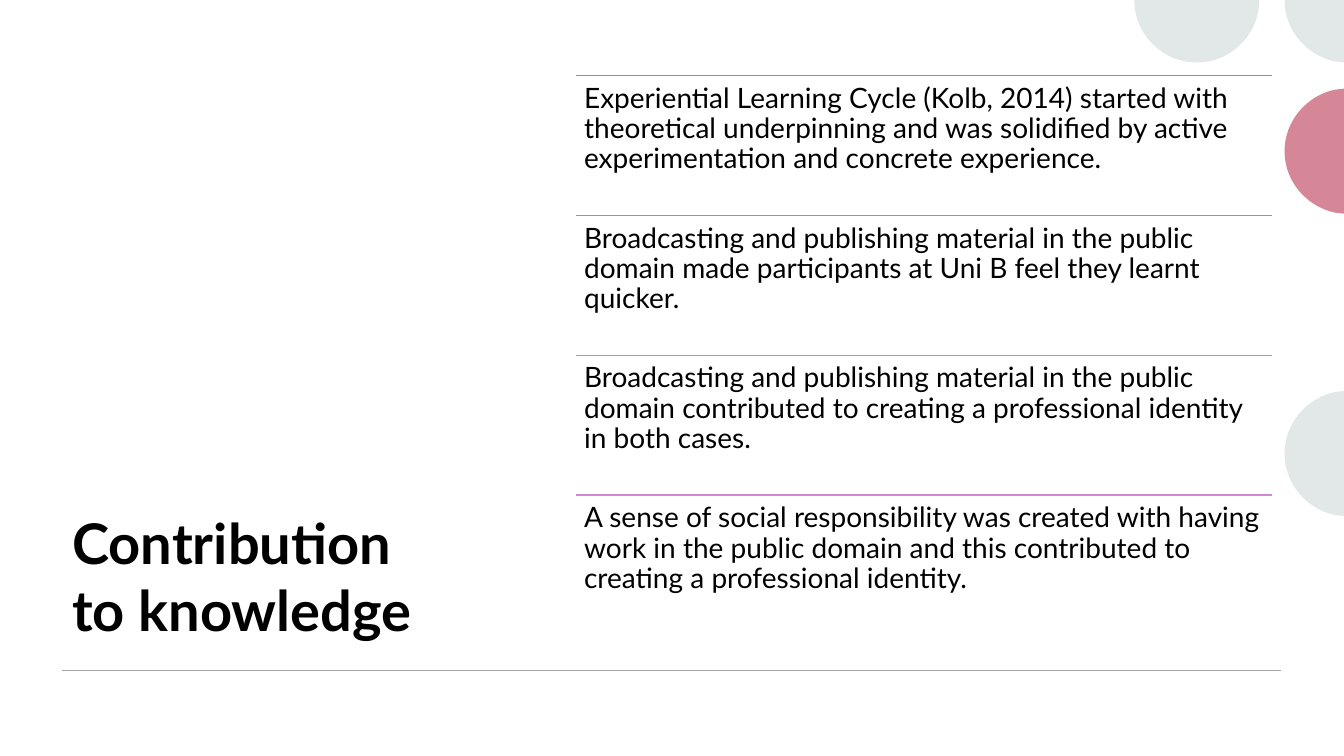
from lxml import etree
from pptx import Presentation
from pptx.dml.color import RGBColor
from pptx.enum.shapes import MSO_CONNECTOR as Connector
from pptx.enum.text import MSO_ANCHOR as Anchor
from pptx.oxml.ns import qn
from pptx.util import Inches, Pt

WIDTH, HEIGHT = 13.33, 7.5
COLORS = {
    "text": "000000",
    "mist": "E2E8E7",
    "rose": "D58797",
    "baseline": "A6A6A6",
    "rule 1": "CC6DA8",
    "rule 2": "CF76BA",
    "rule 3": "D27ECA",
    "rule 4": "D287D5",
}
FINDINGS = [
    "Experiential Learning Cycle (Kolb, 2014) started with theoretical underpinning "
    "and was solidified by active experimentation and concrete experience.",
    "Broadcasting and publishing material in the public domain made participants "
    "at Uni B feel they learnt quicker.",
    "Broadcasting and publishing material in the public domain contributed to "
    "creating a professional identity in both cases.",
    "A sense of social responsibility was created with having work in the public "
    "domain and this contributed to creating a professional identity.",
]
LIST_LEFT, LIST_TOP, LIST_WIDTH, LIST_HEIGHT = 5.71, 0.75, 6.91, 5.55
ROW_HEIGHT = LIST_HEIGHT / len(FINDINGS)

# Outlines relative to (left, middle) of each circle: one point is a line, three a curve.
TOP_HALF = [
    [(0, 0)],
    [(1.24, 0)],
    [(1.24, 0.34), (0.96, 0.62), (0.62, 0.62)],
    [(0.28, 0.62), (0, 0.34), (0, 0)],
]
LOWER_LEFT = [(0.5, 0.61)], [(0.22, 0.55), (0, 0.3), (0, 0)]
CORNER = [[(0, 0)], [(0.59, 0)], [(0.59, 0.62)], *LOWER_LEFT]
LEFT_HALF = [
    [(0.59, -0.62)],
    [(0.59, 0.62)],
    *LOWER_LEFT,
    [(0, -0.3), (0.22, -0.55), (0.5, -0.61)],
]
CIRCLES = [
    (TOP_HALF, 11.25, 0, "mist"),
    (LEFT_HALF, 12.74, 4.5, "mist"),
    (LEFT_HALF, 12.74, 1.5, "rose"),
    (CORNER, 12.74, 0, "mist"),
]


class SlideBuilder:
    font = "Lato"

    def __init__(self, page):
        self.page = page

    def color(self, name):
        return RGBColor.from_string(COLORS[name])

    def edge_circle(self, outline, left, middle, color):
        """Draw a circle cut off by the slide edge, with true curves."""
        segments = [
            [(Inches(left + x), Inches(middle + y)) for x, y in segment]
            for segment in outline
        ]
        pen = self.page.shapes.build_freeform(*segments[0][0])
        pen.add_line_segments([segment[-1] for segment in segments[1:]], close=True)
        circle = pen.convert_to_shape()
        lines = list(circle._element.iter(qn("a:lnTo")))
        for line, segment in zip(lines, segments[1:]):
            if len(segment) == 3:
                curve = etree.Element(qn("a:cubicBezTo"))
                for x, y in segment:
                    etree.SubElement(curve, qn("a:pt"), x=str(x - circle.left), y=str(y - circle.top))
                line.getparent().replace(line, curve)
        circle.shadow.inherit = False
        circle.fill.solid()
        circle.fill.fore_color.rgb = self.color(color)
        circle.line.fill.background()

    def rule(self, left, top, width, color):
        line = self.page.shapes.add_connector(
            Connector.STRAIGHT, Inches(left), Inches(top), Inches(left + width), Inches(top)
        )
        line.line.color.rgb = self.color(color)
        line.line.width = Pt(1)
        etree.SubElement(line._element.spPr, qn("a:effectLst"))

    def text(self, words, left, top, width, height, size, bold=False,
             anchor=Anchor.TOP, inset=(6, 6), spacing=1.0):
        """Add a text box; inset is (sides, top and bottom) in points."""
        box = self.page.shapes.add_textbox(
            Inches(left), Inches(top), Inches(width), Inches(height)
        )
        frame = box.text_frame
        frame.word_wrap = True
        frame.vertical_anchor = anchor
        frame.margin_left = frame.margin_right = Pt(inset[0])
        frame.margin_top = frame.margin_bottom = Pt(inset[1])
        para = frame.paragraphs[0]
        para.line_spacing = spacing
        span = para.add_run()
        span.text = words
        span.font.name = self.font
        span.font.size = Pt(size)
        span.font.bold = bold
        span.font.color.rgb = self.color("text")


def main():
    deck = Presentation()
    deck.slide_width, deck.slide_height = Inches(WIDTH), Inches(HEIGHT)
    builder = SlideBuilder(deck.slides.add_slide(deck.slide_layouts[6]))

    builder.text("Contribution to knowledge", 0.62, 2.72, 3.95, 3.71, 40,
                 bold=True, anchor=Anchor.BOTTOM, inset=(7.2, 3.6))
    for outline, left, middle, color in CIRCLES:
        builder.edge_circle(outline, left, middle, color)
    builder.rule(0.62, 6.65, 12.09, "baseline")

    for row, finding in enumerate(FINDINGS):
        top = LIST_TOP + row * ROW_HEIGHT
        builder.rule(LIST_LEFT, top, LIST_WIDTH, f"rule {row + 1}")
        builder.text(finding, LIST_LEFT, top, LIST_WIDTH, ROW_HEIGHT, 20, spacing=0.9)

    deck.save("out.pptx")


if __name__ == "__main__":
    main()
